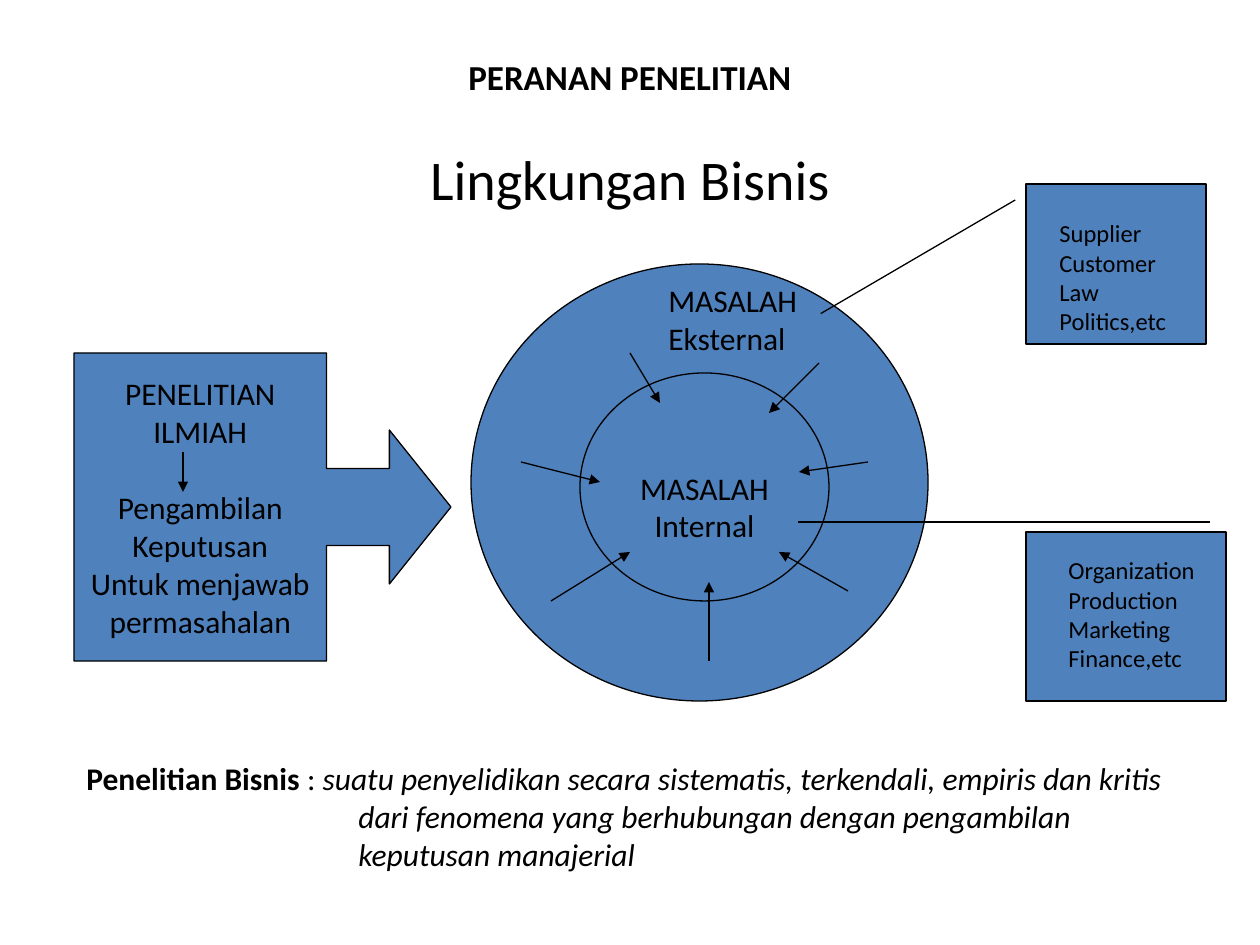
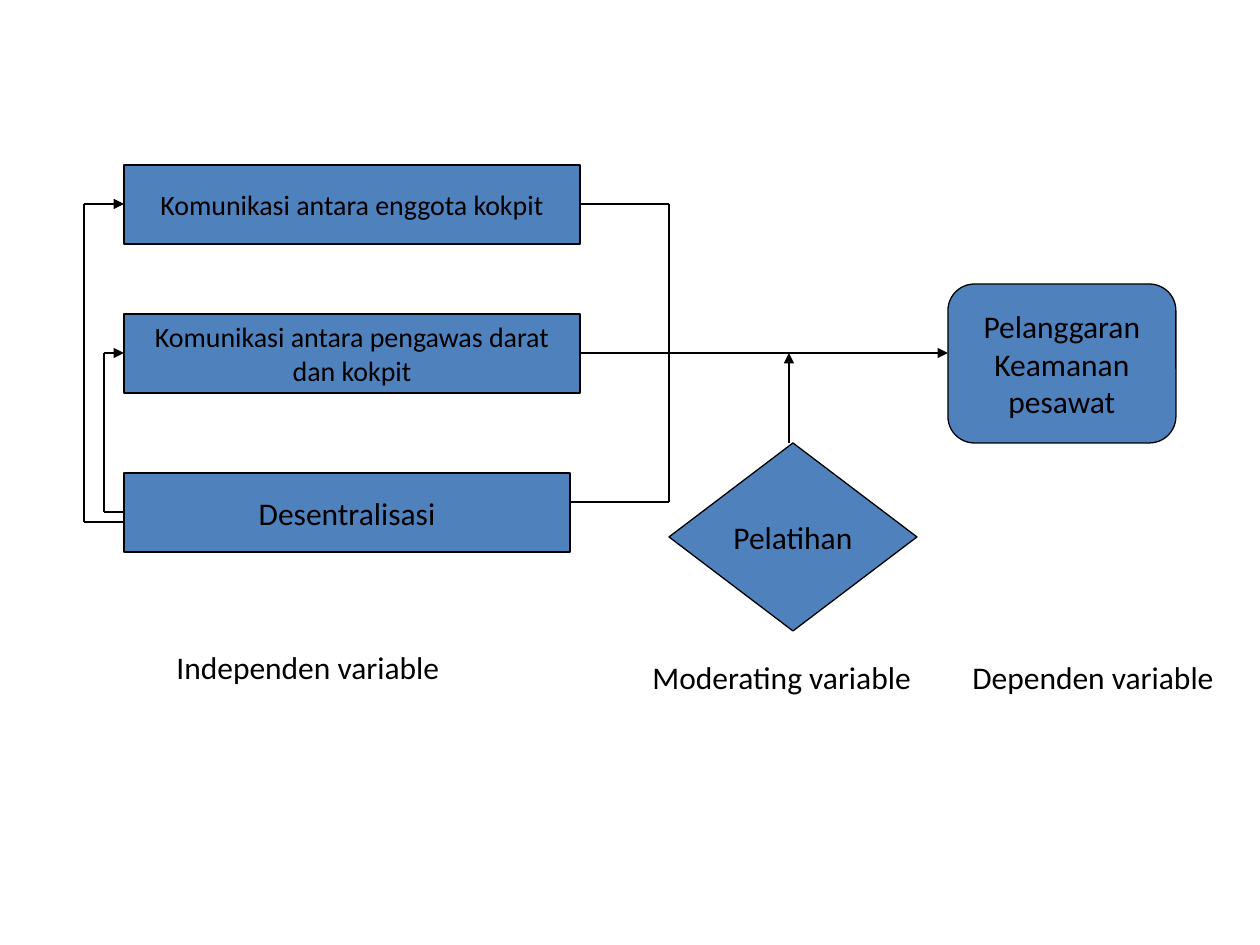
from lxml import etree
from pptx import Presentation
from pptx import util as u
from pptx.dml.color import RGBColor
from pptx.enum import shapes, text
from pptx.oxml.ns import qn

PX_PER_INCH = 126
FONT = "Calibri"
COLORS = {"ink": "000000", "fill": "4F81BD"}
SHAPE = shapes.MSO_SHAPE
LEFT, CENTER = text.PP_ALIGN.LEFT, text.PP_ALIGN.CENTER
TOP, MIDDLE = text.MSO_ANCHOR.TOP, text.MSO_ANCHOR.MIDDLE

# Research role: places are (left, top, width, height), lines are (from x, y, to x, y)
TITLE = ("PERANAN PENELITIAN", (63, 38, 1134, 77))
SUBTITLE = ("Lingkungan Bisnis", (63, 138, 1134, 90))
OUTER_CIRCLE = (471, 264, 457, 437)
INNER_CIRCLE = (["MASALAH", "Internal"], (580, 373, 249, 228))
EXTERNAL = (["MASALAH", "Eksternal"], (656, 275, 176, 126))
INWARD_ARROWS = [
    (630, 353, 660, 403), (819, 363, 769, 413), (868, 462, 799, 472),
    (521, 462, 600, 482), (848, 591, 779, 552), (551, 601, 630, 552),
    (709, 661, 709, 582),
]
CALLOUTS = [
    ((1026, 184, 180, 160), (0.1, -0.06, 0.81, -1.14), (1047, 212, 142, 130),
     ["Supplier", "Customer", "Law", "Politics,etc"]),
    ((1026, 532, 200, 169), (-0.06, 0.92, -0.06, -1.14), (1056, 549, 164, 130),
     ["Organization", "Production", "Marketing", "Finance,etc"]),
]
RESEARCH = (["PENELITIAN", "ILMIAH", "Pengambilan", "Keputusan",
             "Untuk menjawab", "permasahalan"], (74, 353, 377, 308))
DECISION_ARROW = (183, 452, 183, 492)
DEFINITION_PLACE = (74, 753, 1142, 126)
DEFINITION = [
    ("Penelitian Bisnis", True, False),
    (" : ", False, False),
    ("suatu penyelidikan secara sistematis, terkendali, empiris dan kritis "
     "dari fenomena yang berhubungan dengan pengambilan keputusan manajerial", False, True),
]

# Variables
VARIABLES = [
    (SHAPE.RECTANGLE, ["Komunikasi antara enggota kokpit"], (124, 165, 456, 79), 16),
    (SHAPE.RECTANGLE, ["Komunikasi antara pengawas darat", "dan kokpit"],
     (124, 314, 456, 79), 16),
    (SHAPE.RECTANGLE, ["Desentralisasi"], (124, 473, 446, 79), 18),
    (SHAPE.ROUNDED_RECTANGLE, ["Pelanggaran", "Keamanan", "pesawat"],
     (948, 284, 228, 159), 18),
    (SHAPE.DIAMOND, ["Pelatihan"], (669, 443, 248, 188), 18),
]
# Each route runs through its points; True puts an arrowhead on the last leg
ROUTES = [
    ([(124, 512), (104, 512), (104, 353), (124, 353)], True),
    ([(124, 522), (84, 522), (84, 204), (124, 204)], True),
    ([(580, 204), (669, 204), (669, 502), (570, 502)], False),
    ([(580, 353), (948, 353)], True),
    ([(789, 443), (789, 353)], True),
]
CAPTIONS = [
    ("Independen variable", (164, 642, 311, 50)),
    ("Moderating variable", (640, 652, 314, 50)),
    ("Dependen variable", (960, 652, 300, 50)),
]


def px(length):
    return u.Inches(length / PX_PER_INCH)


def color(name):
    return RGBColor.from_string(COLORS[name])


def style(para, size, align, bold=False):
    para.alignment = align
    font = para.font
    font.name, font.size, font.bold = FONT, u.Pt(size), bold
    font.color.rgb = color("ink")


def write(holder, lines, size=18, align=LEFT, anchor=TOP, wrap=False, bold=False):
    frame = holder.text_frame
    frame.word_wrap, frame.vertical_anchor = wrap, anchor
    frame.text = "\n".join(lines)
    for para in frame.paragraphs:
        style(para, size, align, bold)
    return frame


def add_text(page, lines, place, **options):
    box = page.shapes.add_textbox(*map(px, place))
    return write(box, lines, **options)


def add_outlined(page, kind, place, adjustments=()):
    shape = page.shapes.add_shape(kind, *map(px, place))
    shape.shadow.inherit = False
    shape.fill.solid()
    shape.fill.fore_color.rgb = color("fill")
    shape.line.color.rgb = color("ink")
    shape.line.width = u.Pt(0.75)
    for index, value in enumerate(adjustments):
        shape.adjustments[index] = value
    return shape


def add_line(page, ends, arrow=False):
    line = page.shapes.add_connector(shapes.MSO_CONNECTOR.STRAIGHT, *map(px, ends))
    line.line.color.rgb = color("ink")
    line.line.width = u.Pt(0.75)
    if arrow:
        etree.SubElement(line.line._get_or_add_ln(), qn("a:tailEnd"), type="triangle")
    etree.SubElement(line._element.spPr, qn("a:effectLst"))


def build_research_role(page):
    title, place = TITLE
    add_text(page, [title], place, size=20, align=CENTER, anchor=MIDDLE, bold=True)
    subtitle, place = SUBTITLE
    add_text(page, [subtitle], place, size=32, align=CENTER, wrap=True)

    add_outlined(page, SHAPE.OVAL, OUTER_CIRCLE)
    lines, place = INNER_CIRCLE
    inner = add_outlined(page, SHAPE.OVAL, place)
    write(inner, lines, align=CENTER, anchor=MIDDLE).margin_top = px(45)
    add_text(page, *EXTERNAL, wrap=True)
    for ends in INWARD_ARROWS:
        add_line(page, ends, arrow=True)

    for place, pointer, text_place, lines in CALLOUTS:
        add_outlined(page, SHAPE.LINE_CALLOUT_1, place, pointer)
        add_text(page, lines, text_place, size=14)

    lines, place = RESEARCH
    research = add_outlined(page, SHAPE.RIGHT_ARROW_CALLOUT, place, (0.25, 0.25, 0.2, 0.67))
    frame = write(research, lines, align=CENTER, anchor=MIDDLE)
    frame.paragraphs[2].space_before = u.Pt(22)
    add_line(page, DECISION_ARROW, arrow=True)

    para = add_text(page, [], DEFINITION_PLACE, wrap=True).paragraphs[0]
    properties = para._p.get_or_add_pPr()
    properties.set("marL", str(px(272)))
    properties.set("indent", str(-px(272)))
    for words, bold, italic in DEFINITION:
        span = para.add_run()
        span.text = words
        span.font.bold, span.font.italic = bold, italic


def build_variables(page):
    for kind, lines, place, size in VARIABLES:
        shape = add_outlined(page, kind, place)
        write(shape, lines, size=size, align=CENTER, anchor=MIDDLE)
    for points, arrow in ROUTES:
        legs = list(zip(points, points[1:]))
        for number, (start, end) in enumerate(legs, 1):
            add_line(page, start + end, arrow and number == len(legs))
    for caption, place in CAPTIONS:
        add_text(page, [caption], place)


def main():
    deck = Presentation()
    deck.slide_width, deck.slide_height = px(1260), px(945)
    for build in (build_research_role, build_variables):
        build(deck.slides.add_slide(deck.slide_layouts[6]))
    deck.save("out.pptx")


if __name__ == "__main__":
    main()
